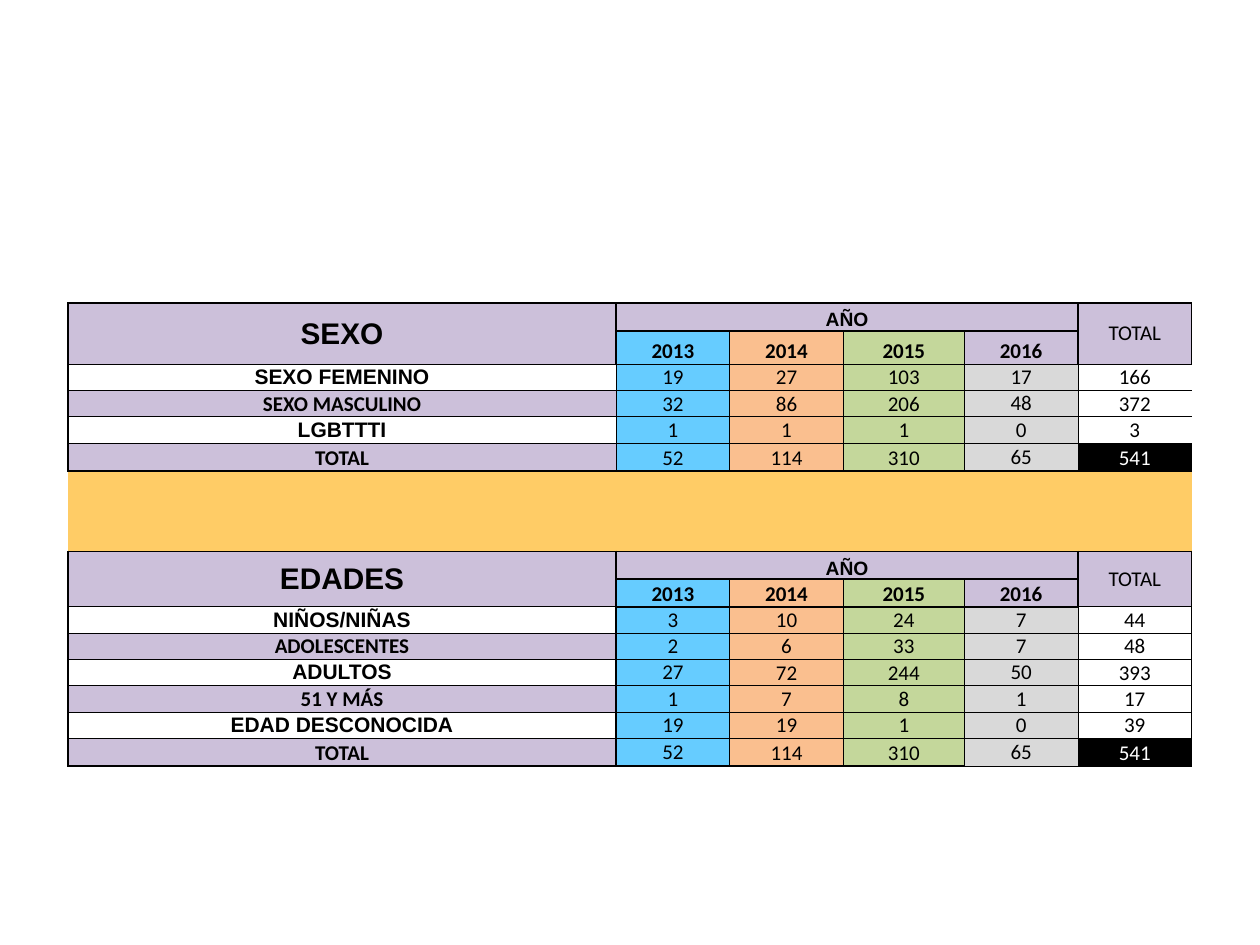
from pptx import Presentation
from pptx.dml.color import RGBColor
from pptx.enum.text import MSO_ANCHOR as ANCHOR, PP_ALIGN as ALIGN
from pptx.oxml.xmlchemy import OxmlElement
from pptx.util import Cm, Pt

BLACK = RGBColor(0x00, 0x00, 0x00)
WHITE = RGBColor(0xFF, 0xFF, 0xFF)
LILAC = RGBColor(0xCC, 0xC0, 0xDA)
BLUE = RGBColor(0x66, 0xCC, 0xFF)
PEACH = RGBColor(0xFA, 0xBF, 0x8F)
GREEN = RGBColor(0xC4, 0xD7, 0x9B)
GREY = RGBColor(0xD9, 0xD9, 0xD9)
AMBER = RGBColor(0xFF, 0xCC, 0x66)

# Content: label, 2013 to 2016, total
YEARS = ["2013", "2014", "2015", "2016"]
SEX_ROWS = [
    ("SEXO FEMENINO", 19, 27, 103, 17, 166),
    ("SEXO MASCULINO", 32, 86, 206, 48, 372),
    ("LGBTTTI", 1, 1, 1, 0, 3),
    ("TOTAL", 52, 114, 310, 65, 541),
]
AGE_ROWS = [
    ("NIÑOS/NIÑAS", 3, 10, 24, 7, 44),
    ("ADOLESCENTES", 2, 6, 33, 7, 48),
    ("ADULTOS", 27, 72, 244, 50, 393),
    ("51 Y MÁS", 1, 7, 8, 1, 17),
    ("EDAD DESCONOCIDA", 19, 19, 1, 0, 39),
    ("TOTAL", 52, 114, 310, 65, 541),
]

# Layout in centimetres
LEFT, TOP = 1.37, 6.11
COLS = [11.05, 2.29, 2.29, 2.44, 2.29, 2.29]
HEAD, BODY, GAP = 0.56, 0.53, 0.54
GAP_ROWS = 3
ROWS = ([HEAD, 0.67] + [BODY] * (len(SEX_ROWS) - 1) + [HEAD] + [GAP] * GAP_ROWS
        + [HEAD, HEAD] + [BODY] * (len(AGE_ROWS) - 1) + [HEAD])
LAST = len(COLS) - 1
YEAR_FILLS = [BLUE, PEACH, GREEN, LILAC]
VALUE_FILLS = [BLUE, PEACH, GREEN, GREY, WHITE]
THIN, THICK = 0.5, 1


def set_borders(cell, widths):
    """Draw left, right, top and bottom borders; a width of 0 hides one."""
    tc_pr = cell._tc.get_or_add_tcPr()
    for side, width in zip("LRTB", widths):
        ln = OxmlElement(f"a:ln{side}")
        ln.set("w", str(Pt(width)))
        if width:
            fill = OxmlElement("a:solidFill")
            color = OxmlElement("a:srgbClr")
            color.set("val", str(BLACK))
            fill.append(color)
        else:
            fill = OxmlElement("a:noFill")
        ln.append(fill)
        tc_pr.append(ln)


def style_cell(cell, fill, borders):
    set_borders(cell, borders)
    cell.fill.solid()
    cell.fill.fore_color.rgb = fill


def write(cell, text, font="Calibri", size=12, bold=False, color=BLACK, anchor=ANCHOR.BOTTOM):
    cell.vertical_anchor = anchor
    p = cell.text_frame.paragraphs[0]
    p.alignment = ALIGN.CENTER
    r = p.add_run()
    r.text = str(text)
    r.font.name, r.font.size, r.font.bold = font, Pt(size), bold
    r.font.color.rgb = color


def merge(table, row, col, row_span, col_span, fill, borders):
    last_row, last_col = row + row_span - 1, col + col_span - 1
    for i in range(row, last_row + 1):
        for j in range(col, last_col + 1):
            style_cell(table.cell(i, j), fill, borders)
    table.cell(row, col).merge(table.cell(last_row, last_col))
    return table.cell(row, col)


def add_section(table, top, title, rows, framed):
    """Header and body; framed sections have a thick label edge and a right edge."""
    box = (THICK,) * 4
    # Header
    cell = merge(table, top, 0, 2, 1, LILAC, (THICK, THICK, THICK, THIN))
    write(cell, title, "Arial", 17, True, anchor=ANCHOR.MIDDLE)
    write(merge(table, top, 1, 1, 4, LILAC, box), "AÑO", "Arial", 11, True)
    total_top = THIN if framed else THICK
    cell = merge(table, top, LAST, 2, 1, LILAC, (THICK, THICK, THICK, total_top))
    write(cell, "TOTAL", anchor=ANCHOR.MIDDLE)
    for j, (year, fill) in enumerate(zip(YEARS, YEAR_FILLS), 1):
        cell = table.cell(top + 1, j)
        style_cell(cell, fill, box)
        write(cell, year, bold=True)

    # Body
    edge = THICK if framed else THIN
    for i, (label, *values) in enumerate(rows):
        first, final, plain = i == 0, i == len(rows) - 1, i % 2 == 0
        bottom = THICK if final else THIN
        cell = table.cell(top + 2 + i, 0)
        style_cell(cell, WHITE if plain else LILAC, (THICK, edge, THIN, bottom))
        write(cell, label, "Arial" if plain else "Calibri", bold=True,
              anchor=ANCHOR.MIDDLE if plain else ANCHOR.BOTTOM)
        for j, (value, fill) in enumerate(zip(values, VALUE_FILLS), 1):
            grand_total = final and j == LAST
            upper = (total_top if j == LAST else THICK) if first else THIN
            lower = THIN if framed and j >= 4 else bottom
            middle = j == 4 or (framed and j == 1)
            cell = table.cell(top + 2 + i, j)
            style_cell(cell, BLACK if grand_total else fill,
                       (edge if j == 1 else THIN,
                        0 if j == LAST and not framed else THIN, upper, lower))
            write(cell, value, color=WHITE if grand_total else BLACK,
                  anchor=ANCHOR.MIDDLE if middle else ANCHOR.BOTTOM)


def main():
    prs = Presentation()
    prs.slide_width, prs.slide_height = Cm(25.4), Cm(19.05)
    s = prs.slides.add_slide(prs.slide_layouts[6])

    # Table grid
    table = s.shapes.add_table(len(ROWS), len(COLS), Cm(LEFT), Cm(TOP),
                               Cm(sum(COLS)), Cm(sum(ROWS))).table
    table.first_row = table.horz_banding = False
    for col, width in zip(table.columns, COLS):
        col.width = Cm(width)
    for row, height in zip(table.rows, ROWS):
        row.height = Cm(height)
    for cell in table.iter_cells():
        cell.margin_left = cell.margin_right = cell.margin_top = cell.margin_bottom = 0

    # Sections with a coloured band between them
    band = len(SEX_ROWS) + 2
    add_section(table, 0, "SEXO", SEX_ROWS, framed=False)
    merge(table, band, 0, GAP_ROWS, LAST, AMBER, (0, 0, THICK, THICK))
    for i in range(GAP_ROWS):
        style_cell(table.cell(band + i, LAST), AMBER,
                   (0, 0, THICK if i == 0 else 0, THICK if i == GAP_ROWS - 1 else 0))
    add_section(table, band + GAP_ROWS, "EDADES", AGE_ROWS, framed=True)

    # Keep empty cells from stretching their rows
    for cell in table.iter_cells():
        if not cell.text_frame.text:
            end = OxmlElement("a:endParaRPr")
            end.set("sz", "1000")
            cell.text_frame.paragraphs[0]._p.append(end)

    prs.save("out.pptx")


if __name__ == "__main__":
    main()
